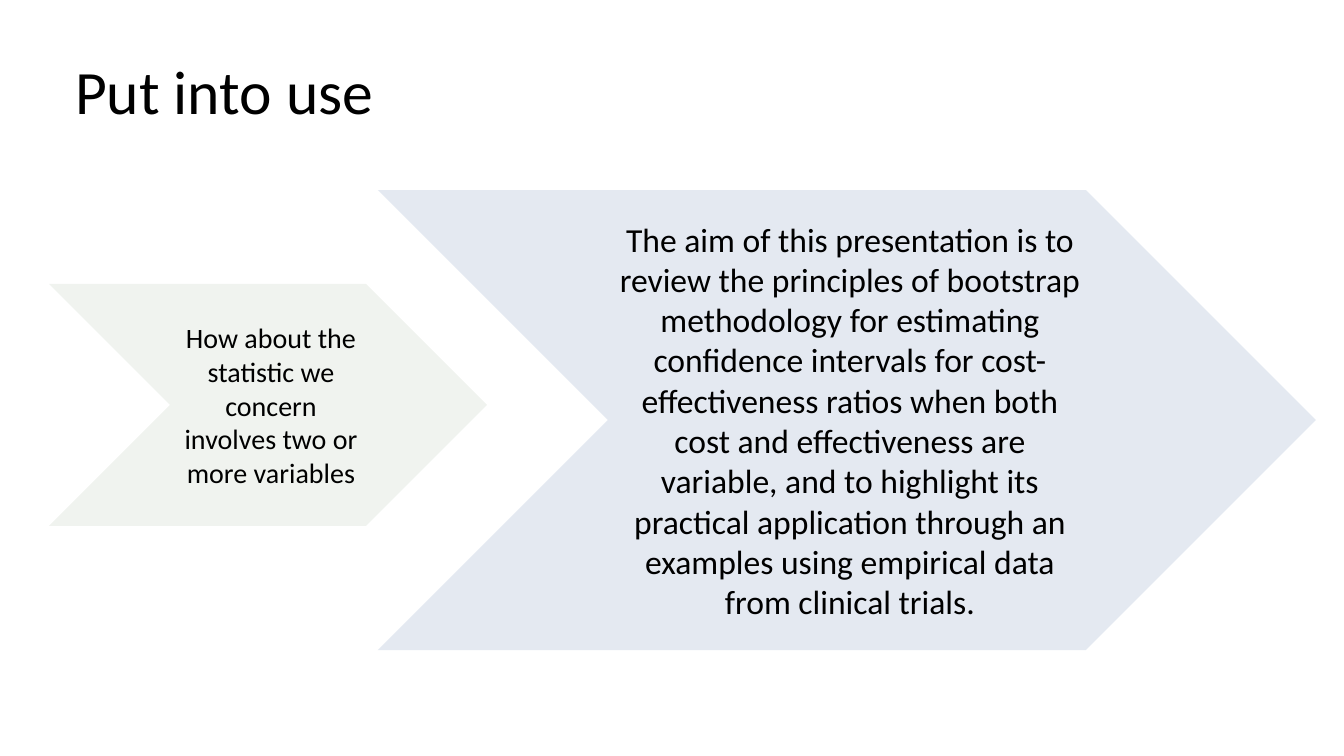
from lxml import etree
from pptx import Presentation, util as u
from pptx.dml.color import RGBColor
from pptx.enum import shapes, text
from pptx.oxml.ns import qn

PX = 12192000 / 1344
THEME = {
    "font": "Calibri",
    "ink": "000000",
    "green": "385723",
    "blue": "2F5597",
    "title": 44,
    "question": 20,
    "aim": 24,
}


def px(length):
    return u.Emu(round(length * PX))


def write(frame, words, size, margins):
    frame.word_wrap = True
    frame.auto_size = text.MSO_AUTO_SIZE.NONE
    frame.vertical_anchor = text.MSO_ANCHOR.MIDDLE
    frame.margin_left, frame.margin_top, frame.margin_right, frame.margin_bottom = map(px, margins)
    paragraph = frame.paragraphs[0]
    run = paragraph.add_run()
    run.text = words
    run.font.name = THEME["font"]
    run.font.size = u.Pt(THEME[size])
    run.font.color.rgb = RGBColor.from_string(THEME["ink"])
    return paragraph


presentation = Presentation()
presentation.slide_width, presentation.slide_height = px(1344), px(756)
slide = presentation.slides.add_slide(presentation.slide_layouts[5])

title = slide.shapes.title
title.left, title.top, title.width, title.height = map(px, (51, 22, 1152, 146))
paragraph = write(title.text_frame, "Put into use", "title", (24, 5, 10, 5))
paragraph.alignment = text.PP_ALIGN.LEFT
paragraph.line_spacing = 0.9

chevrons = [
    ("How about the statistic we concern involves two or more variables",
     "question", "green", 7, (49, 284, 438, 242), (9, 3, 3, 3)),
    ("The aim of this presentation is to review the principles of bootstrap methodology "
     "for estimating confidence intervals for cost-effectiveness ratios when both cost and "
     "effectiveness are variable, and to highlight its practical application through an "
     "examples using empirical data from clinical trials.",
     "aim", "blue", 13, (378, 190, 938, 460), (10, 4, 4, 4)),
]
for words, size, color, opacity, box, margins in chevrons:
    chevron = slide.shapes.add_shape(shapes.MSO_SHAPE.CHEVRON, *map(px, box))
    chevron.shadow.inherit = False
    chevron.line.fill.background()
    chevron.fill.solid()
    chevron.fill.fore_color.rgb = RGBColor.from_string(THEME[color])
    fill_color = chevron.element.spPr.find(qn("a:solidFill")).find(qn("a:srgbClr"))
    etree.SubElement(fill_color, qn("a:alpha")).set("val", str(opacity * 1000))
    paragraph = write(chevron.text_frame, words, size, margins)
    paragraph.alignment = text.PP_ALIGN.CENTER

presentation.save("out.pptx")
